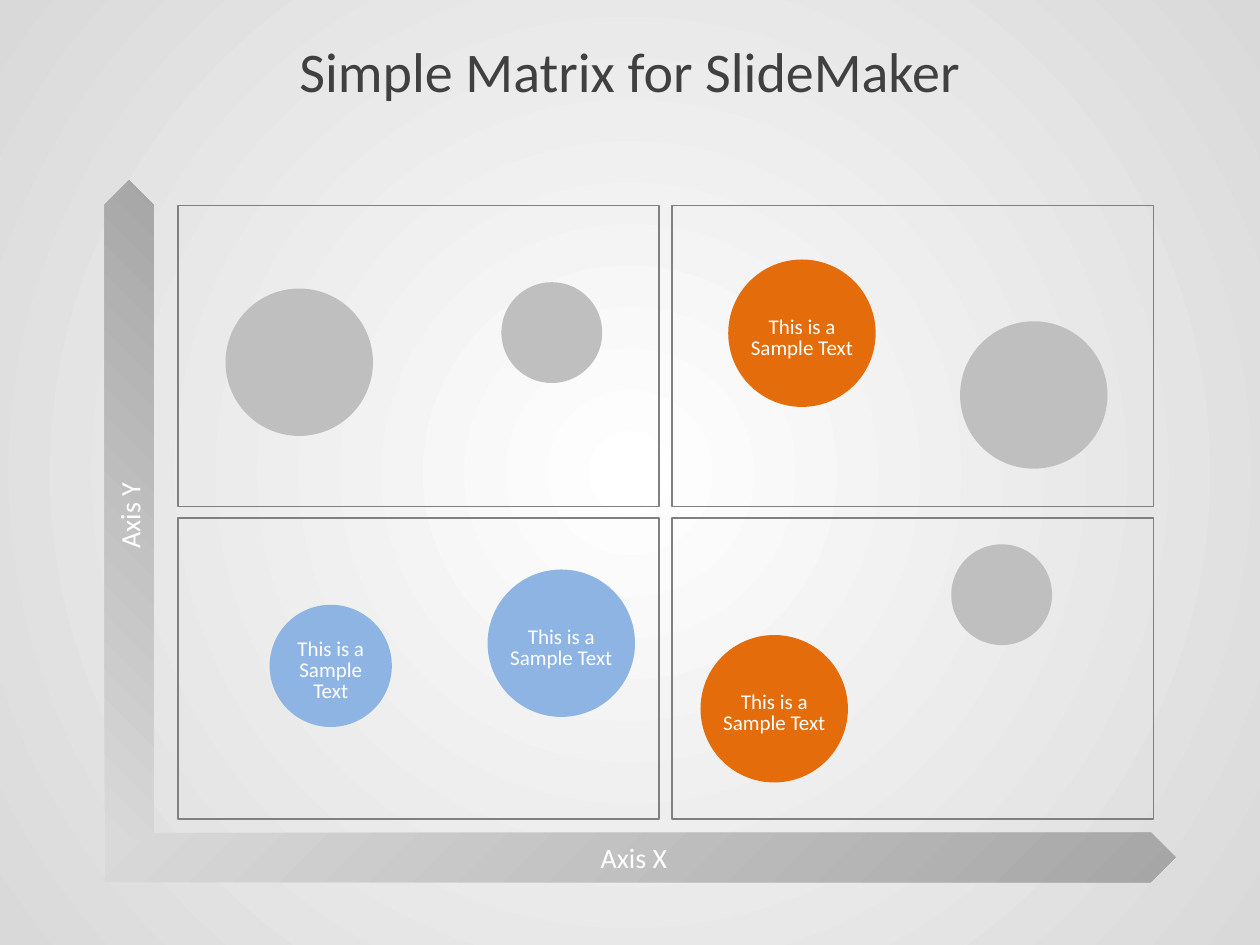
import pptx
import pptx.util
import pptx.dml.color
import pptx.enum.dml
import pptx.enum.shapes
import pptx.enum.text
import pptx.oxml
import pptx.oxml.ns

SHAPE = pptx.enum.shapes.MSO_SHAPE
COLORS = {
    "title": "404040", "border": "808080", "text": "FFFFFF",
    "center": "FFFFFF", "edge": "D9D9D9",
    "axis_start": "D9D9D9", "axis_end": "A6A6A6",
    "gray": "BFBFBF", "blue": "8EB4E3", "orange": "E46C0A",
}
SAMPLE = "This is a Sample Text"


def color(name):
    return pptx.dml.color.RGBColor.from_string(COLORS[name])


class MatrixSlide:
    """Draws on one slide; lengths are units of a 100 by 75 grid."""

    font = "Calibri"

    def __init__(self, deck):
        self.unit = deck.slide_width / 100
        self.slide = deck.slides.add_slide(deck.slide_layouts[5])

    def box(self, *units):
        return [round(value * self.unit) for value in units]

    def add_text(self, shape, words, size, ink="text", leading=None):
        frame = shape.text_frame
        frame.word_wrap = True
        frame.vertical_anchor = pptx.enum.text.MSO_ANCHOR.MIDDLE
        paragraph = frame.paragraphs[0]
        paragraph.alignment = pptx.enum.text.PP_ALIGN.CENTER
        if leading:
            paragraph.line_spacing = pptx.util.Pt(leading)
        run = paragraph.add_run()
        run.text = words
        run.font.name = self.font
        run.font.size = pptx.util.Pt(size)
        run.font.color.rgb = color(ink)

    def blend(self, fill, start, end):
        fill.gradient()
        for stop, name in zip(fill.gradient_stops, (start, end)):
            stop.color.rgb = color(name)

    def background(self):
        """Radial gradient spreading from the middle of the slide."""
        self.blend(self.slide.background.fill, "center", "edge")
        qn = pptx.oxml.ns.qn
        linear = next(self.slide.element.iter(qn("a:lin")))
        radial = pptx.oxml.parse_xml(
            f'<a:path {pptx.oxml.ns.nsdecls("a")} path="circle">'
            '<a:fillToRect l="50000" t="50000" r="50000" b="50000"/></a:path>')
        linear.getparent().replace(linear, radial)

    def title(self, words):
        title = self.slide.shapes.title
        title.left, title.top, title.width, title.height = self.box(5, 1.7, 90, 7.8)
        self.add_text(title, words, 32, "title")

    def outline(self, kind, *units, parent=None):
        shape = (parent or self.slide).shapes.add_shape(kind, *self.box(*units))
        shape.shadow.inherit = False
        shape.line.fill.background()
        return shape

    def quadrant(self, left, top, width, height):
        quadrant = self.outline(SHAPE.RECTANGLE, left, top, width, height)
        quadrant.fill.background()
        quadrant.line.color.rgb = color("border")
        quadrant.line.width = pptx.util.Pt(1)

    def axis(self, label, left, top, length, rotation=0):
        arrow = self.outline(SHAPE.PENTAGON, left, top, length, 3.9)
        arrow.rotation = rotation
        self.blend(arrow.fill, "axis_start", "axis_end")
        arrow.fill.gradient_angle = 315
        self.add_text(arrow, label, 16)

    def bubble(self, left, top, diameter, tint, caption=None):
        """Circle; with a caption it is grouped with its text box."""
        group = self.slide.shapes.add_group_shape() if caption else None
        circle = self.outline(SHAPE.OVAL, left, top, diameter, diameter, parent=group)
        circle.fill.solid()
        circle.fill.fore_color.rgb = color(tint)
        if caption:
            width, height = diameter * 0.94, diameter * 0.76
            label = group.shapes.add_textbox(*self.box(
                left + (diameter - width) / 2,
                top + (diameter - height) / 2 + 0.4, width, height))
            self.add_text(label, caption, 12, leading=12)
            label.text_frame.auto_size = pptx.enum.text.MSO_AUTO_SIZE.SHAPE_TO_FIT_TEXT


def main():
    deck = pptx.Presentation()
    deck.slide_width = pptx.util.Inches(10)
    deck.slide_height = pptx.util.Inches(7.5)

    matrix = MatrixSlide(deck)
    matrix.background()
    matrix.title("Simple Matrix for SlideMaker")
    for column in range(2):
        for row in range(2):
            matrix.quadrant(14.1 + column * 39.25, 16.3 + row * 24.8, 38.2, 23.9)
    matrix.axis("Axis X", 8.3, 66.1, 85)
    matrix.axis("Axis Y", -15.9, 38.5, 52.3, rotation=270)

    small, medium, large = 8, 9.7, 11.7
    for bubble in (
        (17.9, 22.9, large, "gray"),
        (39.8, 22.4, small, "gray"),
        (76.2, 25.5, large, "gray"),
        (75.5, 43.2, small, "gray"),
        (21.4, 48, medium, "blue", SAMPLE),
        (38.7, 45.2, large, "blue", SAMPLE),
        (57.8, 20.6, large, "orange", SAMPLE),
        (55.6, 50.4, large, "orange", SAMPLE),
    ):
        matrix.bubble(*bubble)
    deck.save("out.pptx")


if __name__ == "__main__":
    main()
